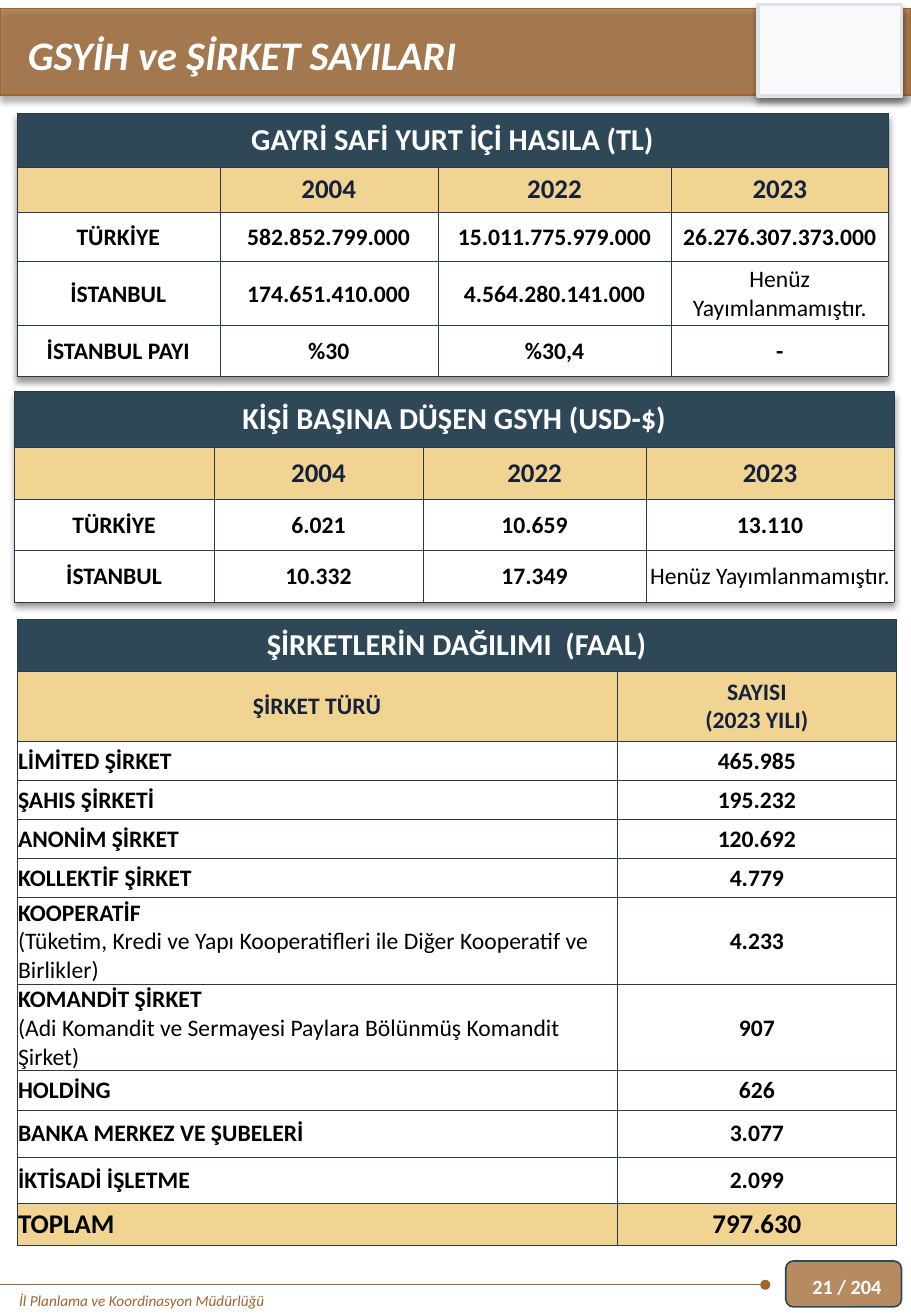
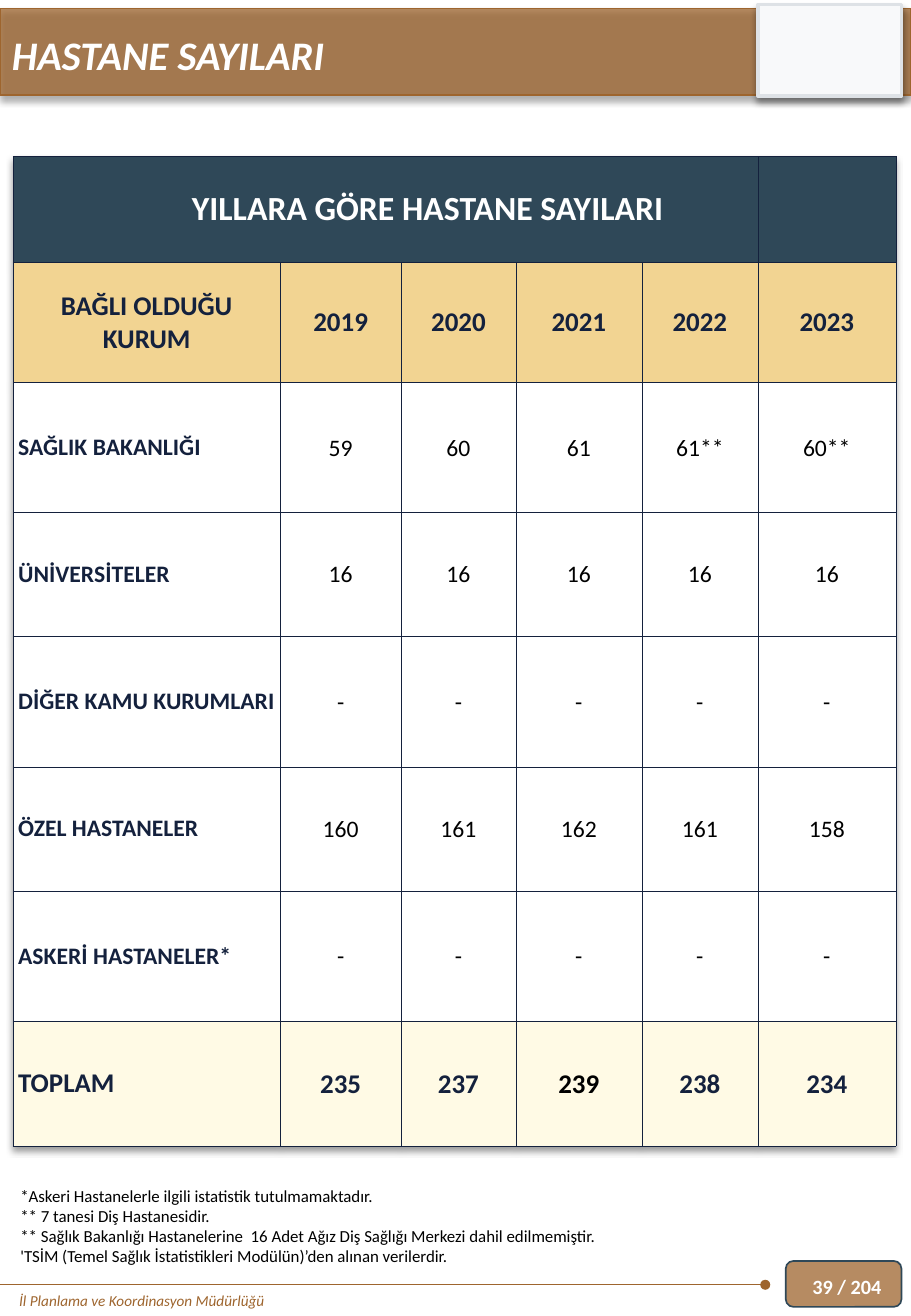
import pptx
import pptx.util
import pptx.dml.color
import pptx.enum.shapes
import pptx.enum.text
import pptx.oxml
import pptx.oxml.ns
from pptx.util import Pt

SHAPE = pptx.enum.shapes.MSO_SHAPE
ALIGN = pptx.enum.text.PP_ALIGN
MIDDLE = pptx.enum.text.MSO_ANCHOR.MIDDLE
FONT = "Calibri"
WIDTH, HEIGHT = 540, 780
C = {
    "brown": "9E652E", "slate": "2F4858", "sand": "F2D492", "cream": "FFFAE5",
    "navy": "14213D", "grid": "283845", "white": "FFFFFF", "black": "000000",
    "paper": "F8F9FA", "silver": "DEE2E6",
}
FOOTER = "İl Planlama ve Koordinasyon Müdürlüğü"
PENDING = "Henüz Yayımlanmamıştır."
TIGHT = (0.7, 0.7, 0.7, 0)

BASE = {
    "grid": "grid", "shadow": True, "title_size": 18, "title_span": 4,
    "title_indent": 0, "head_size": 16, "head_pad": (5, 0, 5, 0),
    "label": {"size": 14, "bold": True}, "label_pad": TIGHT, "label_align": ALIGN.CENTER,
    "value": {"size": 14, "bold": True}, "total": None,
}

GDP = BASE | {
    "at": (10, 67),
    "cols": [120.3, 129.2, 138.5, 128.6],
    "heights": [32, 26.7, 29.2, 38, 30],
    "rows": [
        ["GAYRİ SAFİ YURT İÇİ HASILA (TL)"],
        ["", "2004", "2022", "2023"],
        ["TÜRKİYE", "582.852.799.000", "15.011.775.979.000", "26.276.307.373.000"],
        ["İSTANBUL", "174.651.410.000", "4.564.280.141.000", PENDING],
        ["İSTANBUL PAYI", "%30", "%30,4", "-"],
    ],
}

GDP_PER_HEAD = BASE | {
    "at": (8.5, 231.8),
    "cols": [118.3, 124, 132.2, 147],
    "heights": [33.5, 30.5, 30.5, 30.5],
    "rows": [
        ["KİŞİ BAŞINA DÜŞEN GSYH (USD-$)"],
        ["", "2004", "2022", "2023"],
        ["TÜRKİYE", "6.021", "10.659", "13.110"],
        ["İSTANBUL", "10.332", "17.349", PENDING],
    ],
}

COMPANIES = BASE | {
    "at": (10, 367),
    "cols": [356, 165.4],
    "heights": [31, 41.3] + [23.2] * 4 + [51.3] * 2 + [23.2, 27.9, 27.3, 24.9],
    "shadow": False, "title_span": 2, "head_size": 14, "head_pad": (7.2, 3.6, 7.2, 3.6),
    "label_align": ALIGN.LEFT,
    "total": {"fill": "sand", "color": "black"},
    "rows": [
        ["ŞİRKETLERİN DAĞILIMI  (FAAL)"],
        ["ŞİRKET TÜRÜ", "SAYISI\n(2023 YILI)"],
        ["LİMİTED ŞİRKET", "465.985"],
        ["ŞAHIS ŞİRKETİ", "195.232"],
        ["ANONİM ŞİRKET", "120.692"],
        ["KOLLEKTİF ŞİRKET", "4.779"],
        ["KOOPERATİF\v(Tüketim, Kredi ve Yapı Kooperatifleri ile Diğer Kooperatif ve Birlikler)", "4.233"],
        ["KOMANDİT ŞİRKET\v(Adi Komandit ve Sermayesi Paylara Bölünmüş Komandit Şirket)", "907"],
        ["HOLDİNG", "626"],
        ["BANKA MERKEZ VE ŞUBELERİ", "3.077"],
        ["İKTİSADİ İŞLETME", "2.099"],
        ["TOPLAM", "797.630"],
    ],
}

HOSPITALS = BASE | {
    "at": (7.8, 92.7),
    "cols": [158.3, 71.7, 68, 74.7, 68.8, 81.7],
    "heights": [62.8, 71.2, 77, 73.5, 77.4, 73.5, 77.2, 74],
    "grid": "navy", "title_size": 20, "title_span": 5, "title_indent": 50,
    "head_pad": (3, 0, 3, 0), "label_pad": (3, 0, 3, 0), "label_align": ALIGN.LEFT,
    "label": {"size": 14, "bold": True, "color": "navy"},
    "value": {"size": 14},
    "total": {"fill": "cream", "color": "navy"},
    "black_total": 3,
    "rows": [
        ["YILLARA GÖRE HASTANE SAYILARI"],
        ["BAĞLI OLDUĞU KURUM", "2019", "2020", "2021", "2022", "2023"],
        ["SAĞLIK BAKANLIĞI", "59", "60", "61", "61**", "60**"],
        ["ÜNİVERSİTELER"] + ["16"] * 5,
        ["DİĞER KAMU KURUMLARI"] + ["-"] * 5,
        ["ÖZEL HASTANELER", "160", "161", "162", "161", "158"],
        ["ASKERİ HASTANELER*"] + ["-"] * 5,
        ["TOPLAM", "235", "237", "239", "238", "234"],
    ],
}

HOSPITAL_NOTES = "\n".join([
    "*Askeri Hastanelerle ilgili istatistik tutulmamaktadır.",
    "** 7 tanesi Diş Hastanesidir.",
    "** Sağlık Bakanlığı Hastanelerine  16 Adet Ağız Diş Sağlığı Merkezi dahil edilmemiştir.",
    "'TSİM (Temel Sağlık İstatistikleri Modülün)’den alınan verilerdir.",
])

SLIDES = [
    {"title": "GSYİH ve ŞİRKET SAYILARI", "title_left": 9.4, "page": "21 / 204",
     "tables": [GDP, GDP_PER_HEAD, COMPANIES], "notes": None},
    {"title": "HASTANE SAYILARI", "title_left": 0, "page": "39 / 204",
     "tables": [HOSPITALS], "notes": HOSPITAL_NOTES},
]


def rgb(name):
    return pptx.dml.color.RGBColor.from_string(C[name])


def xml(text):
    return pptx.oxml.parse_xml(text.replace(" ", f" {pptx.oxml.ns.nsdecls('a')} ", 1))


def shadow_xml():
    return xml(
        f'<a:effectLst ><a:outerShdw blurRad="{Pt(4)}" dist="{Pt(3)}" dir="5400000" '
        f'algn="t" rotWithShape="0"><a:srgbClr val="{C["black"]}">'
        '<a:alpha val="40000"/></a:srgbClr></a:outerShdw></a:effectLst>')


def write(tf, text, size=14, color="black", bold=False, italic=False, align=ALIGN.LEFT):
    for i, line in enumerate(text.split("\n")):
        p = tf.add_paragraph() if i else tf.paragraphs[0]
        p.alignment = align
        for j, part in enumerate(line.split("\v")):
            if not part:
                continue
            if j:
                p.add_line_break()
            r = p.add_run()
            r.text = part
            r.font.name, r.font.size = FONT, Pt(size)
            r.font.bold, r.font.italic = bold and j == 0, italic
            r.font.color.rgb = rgb(color)


def textbox(s, box, text, anchor=None, **fmt):
    tf = s.shapes.add_textbox(*map(Pt, box)).text_frame
    tf.word_wrap = True
    tf.vertical_anchor = anchor
    write(tf, text, **fmt)


def panel(s, kind, box, fill, line, width, alpha=100, shadow=False):
    sp = s.shapes.add_shape(kind, *map(Pt, box))
    sp.fill.solid()
    sp.fill.fore_color.rgb = rgb(fill)
    sp.line.color.rgb = rgb(line)
    sp.line.width = Pt(width)
    sp.shadow.inherit = False
    if alpha < 100:
        color = sp._element.spPr.find(".//" + pptx.oxml.ns.qn("a:srgbClr"))
        color.append(xml(f'<a:alpha val="{alpha * 1000}"/>'))
    if shadow:
        effects = sp._element.spPr.find(pptx.oxml.ns.qn("a:effectLst"))
        effects.getparent().replace(effects, shadow_xml())


def frame(s, page):
    panel(s, SHAPE.ROUNDED_RECTANGLE, (465.8, 747.4, 68.6, 27.2), "brown", "slate", 1, alpha=75)
    panel(s, SHAPE.RECTANGLE, (0, 5, WIDTH, 51.2), "brown", "brown", 1, alpha=75, shadow=True)
    panel(s, SHAPE.RECTANGLE, (449.3, 2.6, 85.2, 54.4), "paper", "silver", 2, shadow=True)
    cn = s.shapes.add_connector(
        pptx.enum.shapes.MSO_CONNECTOR.STRAIGHT, Pt(453.6), Pt(761.5), Pt(0), Pt(761.5))
    cn.line.color.rgb = rgb("brown")
    cn.line.width = Pt(0.5)
    cn.line._get_or_add_ln().append(xml('<a:headEnd type="oval"/>'))
    cn._element.spPr.append(xml("<a:effectLst />"))
    textbox(s, (4.3, 761.8, 338, 18), FOOTER, size=9, color="brown", italic=True)
    textbox(s, (474.5, 747.4, 65.5, 30), page, MIDDLE, size=12, color="white", bold=True)


def cell_style(t, i, j):
    head = {"bold": True, "align": ALIGN.CENTER}
    if i == 0:
        left, *rest = t["head_pad"]
        return "slate", (left + t["title_indent"], *rest), head | {
            "size": t["title_size"], "color": "white"}
    if i == 1:
        return "sand", t["head_pad"], head | {"size": t["head_size"], "color": "navy"}
    if j == 0:
        fill, pad, fmt = "white", t["label_pad"], t["label"] | {"align": t["label_align"]}
    else:
        fill, pad, fmt = "white", TIGHT, t["value"] | {"align": ALIGN.CENTER}
    if t["total"] and i == len(t["rows"]) - 1:
        color = "black" if j and j == t.get("black_total") else t["total"]["color"]
        fill, fmt = t["total"]["fill"], fmt | {"size": 16, "bold": True, "color": color}
    return fill, pad, fmt


def draw_table(s, t):
    cols, heights = t["cols"], t["heights"]
    tbl = s.shapes.add_table(
        len(heights), len(cols), *map(Pt, (*t["at"], sum(cols), sum(heights)))).table
    tbl.first_row = tbl.horz_banding = False
    if t["shadow"]:
        tbl._tbl.tblPr.insert(0, shadow_xml())
    for col, width in zip(tbl.columns, cols):
        col.width = Pt(width)
    for row, height in zip(tbl.rows, heights):
        row.height = Pt(height)
    tbl.cell(0, 0).merge(tbl.cell(0, t["title_span"] - 1))
    for i, texts in enumerate(t["rows"]):
        for j in range(len(cols)):
            cell = tbl.cell(i, j)
            fill, pad, fmt = cell_style(t, i, j)
            text = texts[j] if j < len(texts) else ""
            if text == PENDING:
                fmt = fmt | {"bold": False}
            cell.margin_left, cell.margin_top, cell.margin_right, cell.margin_bottom = map(Pt, pad)
            cell.vertical_anchor = MIDDLE
            for side in "LRTB":
                cell._tc.get_or_add_tcPr().append(xml(
                    f'<a:ln{side} w="{Pt(0.25)}"><a:solidFill><a:srgbClr val="{C[t["grid"]]}"/>'
                    f"</a:solidFill></a:ln{side}>"))
            cell.fill.solid()
            cell.fill.fore_color.rgb = rgb(fill)
            write(cell.text_frame, text, **fmt)


def main():
    prs = pptx.Presentation()
    prs.slide_width, prs.slide_height = Pt(WIDTH), Pt(HEIGHT)
    for item in SLIDES:
        s = prs.slides.add_slide(prs.slide_layouts[6])
        frame(s, item["page"])
        textbox(s, (item["title_left"], 14.4, 430, 36), item["title"],
                size=24, color="white", bold=True, italic=True)
        for t in item["tables"]:
            draw_table(s, t)
        if item["notes"]:
            textbox(s, (5, 699, 535, 55.4), item["notes"], size=10, align=ALIGN.JUSTIFY)
    prs.save("out.pptx")


if __name__ == "__main__":
    main()
